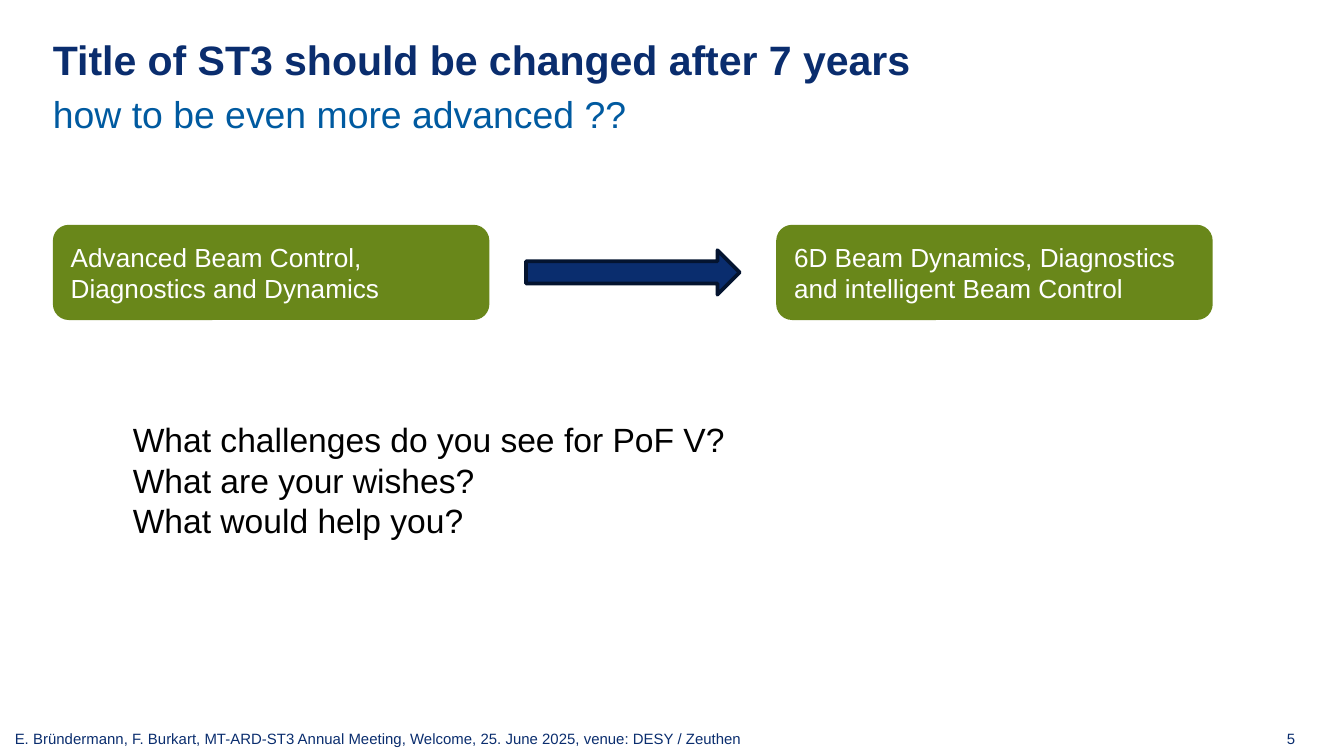
from dataclasses import dataclass

from lxml import etree
from pptx import Presentation
from pptx import util as u
from pptx.dml.color import RGBColor
from pptx.enum import shapes, text
from pptx.oxml import ns


@dataclass(frozen=True)
class Theme:
    font: str = "Arial"
    navy: str = "0A2D6E"
    outline: str = "041430"
    blue: str = "005AA0"
    green: str = "69871A"
    white: str = "FFFFFF"
    black: str = "000000"
    title: int = 22
    subtitle: int = 20
    question: int = 18
    label: int = 14
    footer: int = 8


class Page:
    def __init__(self, deck, theme):
        self.theme = theme
        self.slide = deck.slides.add_slide(deck.slide_layouts[1])

    def style(self, para, size, color, bold=False):
        para.alignment = text.PP_ALIGN.LEFT
        para.font.name = self.theme.font
        para.font.size = u.Pt(size)
        para.font.bold = bold
        para.font.color.rgb = RGBColor.from_string(color)

    def placeholder(self, index, place, words, size, color, bold=False, spacing=None):
        box = self.slide.placeholders[index]
        box.left, box.top, box.width, box.height = map(u.Cm, place)
        frame = box.text_frame
        frame.margin_left = frame.margin_top = 0
        frame.margin_right = frame.margin_bottom = 0
        frame.auto_size = text.MSO_AUTO_SIZE.NONE
        frame.text = words
        para = frame.paragraphs[0]
        para.space_before = u.Pt(0)
        para.line_spacing = spacing
        properties = para._p.get_or_add_pPr()
        properties.set("marL", "0")
        properties.set("indent", "0")
        etree.SubElement(properties, ns.qn("a:buNone"))
        self.style(para, size, color, bold)
        return frame

    def shape(self, kind, place, fill, line=None):
        box = self.slide.shapes.add_shape(kind, *map(u.Cm, place))
        box.shadow.inherit = False
        box.fill.solid()
        box.fill.fore_color.rgb = RGBColor.from_string(fill)
        if line:
            box.line.color.rgb = RGBColor.from_string(line)
            box.line.width = u.Pt(2)
        else:
            box.line.fill.background()
        return box

    def label(self, place, words):
        box = self.shape(shapes.MSO_SHAPE.ROUNDED_RECTANGLE, place, self.theme.green)
        box.text_frame.text = words
        box.text_frame.vertical_anchor = text.MSO_ANCHOR.MIDDLE
        self.style(box.text_frame.paragraphs[0], self.theme.label, self.theme.white)

    def textbox(self, place, lines, size, color, wrap=True, tab=None):
        box = self.slide.shapes.add_textbox(*map(u.Cm, place))
        frame = box.text_frame
        frame.word_wrap = wrap
        frame.text = "\n".join(lines)
        for para in frame.paragraphs:
            if tab:
                tabs = etree.SubElement(para._p.get_or_add_pPr(), ns.qn("a:tabLst"))
                etree.SubElement(tabs, ns.qn("a:tab"), pos=str(u.Cm(tab)), algn="r")
            self.style(para, size, color)


def main():
    theme = Theme()
    deck = Presentation()
    deck.slide_width, deck.slide_height = u.Cm(25.4), u.Cm(14.29)
    page = Page(deck, theme)

    left, width = 1, 23.4
    title = page.placeholder(0, (left, 0.6, width, 1.05),
                             "Title of ST3 should be changed after 7 years",
                             theme.title, theme.navy, bold=True)
    title.vertical_anchor = text.MSO_ANCHOR.MIDDLE
    subtitle = page.placeholder(1, (left, 1.94, width, 0.74),
                                "how to be even more advanced ??",
                                theme.subtitle, theme.blue, spacing=u.Pt(18))
    subtitle.vertical_anchor = text.MSO_ANCHOR.TOP

    label_top, label_width, label_height = 4.25, 8.25, 1.8
    arrow_width, arrow_height, gap = 4.04, 0.84, 0.69
    arrow_left = left + label_width + gap
    arrow_top = label_top + (label_height - arrow_height) / 2
    topics = {
        left: "Advanced Beam Control, Diagnostics and Dynamics",
        arrow_left + arrow_width + gap:
            "6D Beam Dynamics, Diagnostics and intelligent Beam Control",
    }
    for topic_left, words in topics.items():
        page.label((topic_left, label_top, label_width, label_height), words)
    page.shape(shapes.MSO_SHAPE.RIGHT_ARROW,
               (arrow_left, arrow_top, arrow_width, arrow_height),
               theme.navy, theme.outline)

    page.textbox((2.26, 7.8, 11.8, 2.57),
                 ["What challenges do you see for PoF V?",
                  "What are your wishes?",
                  "What would help you?"],
                 theme.question, theme.black, wrap=False)
    page.textbox((0.03, 13.67, 25.37, 0.6),
                 ["E. Bründermann, F. Burkart, MT-ARD-ST3 Annual Meeting, Welcome, "
                  "25. June 2025, venue: DESY / Zeuthen\t5"],
                 theme.footer, theme.navy, tab=24.2)

    deck.save("out.pptx")


if __name__ == "__main__":
    main()
